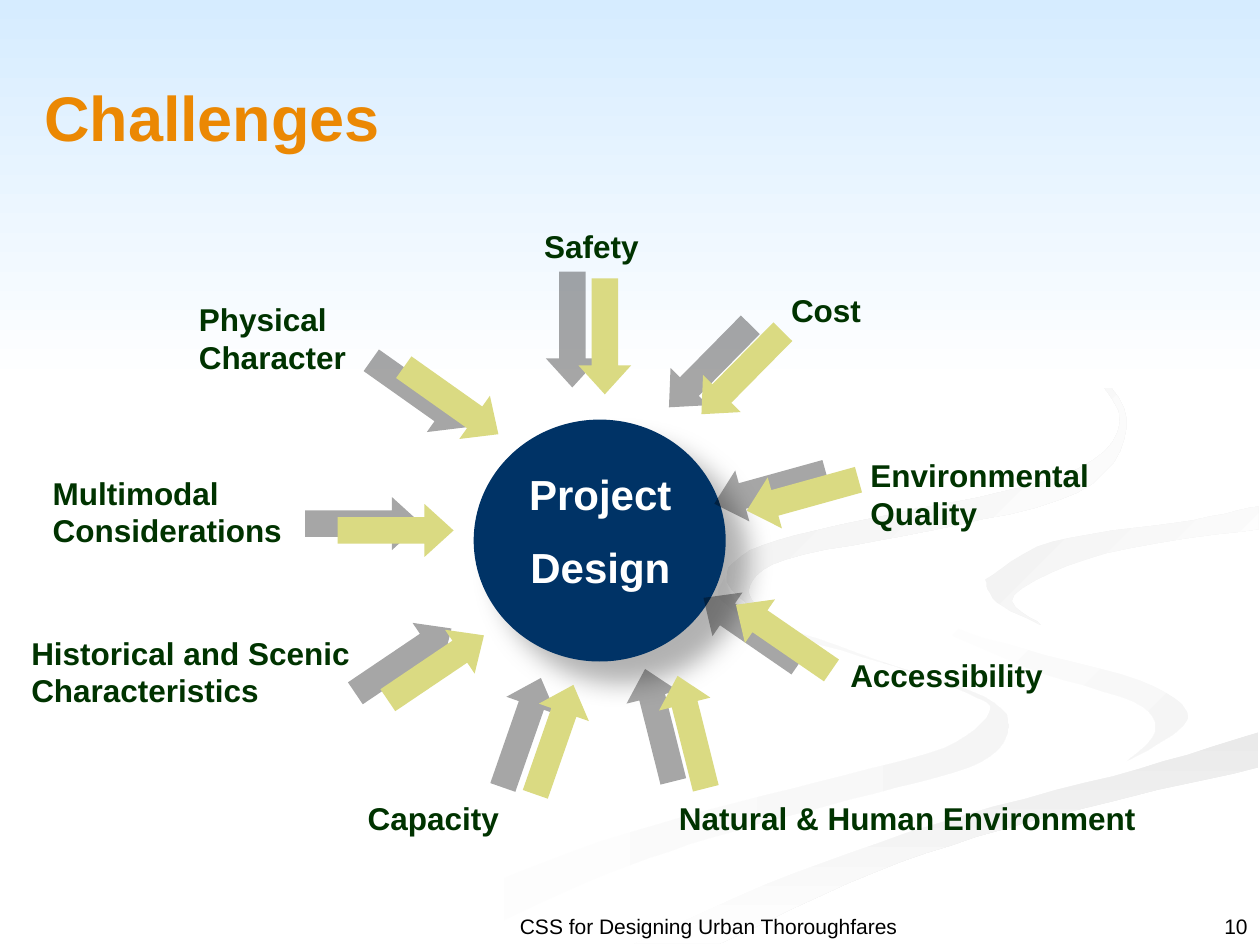
from typing import NamedTuple

from lxml.etree import SubElement
from pptx import Presentation
from pptx.dml.color import RGBColor
from pptx.enum.shapes import MSO_SHAPE
from pptx.enum.text import MSO_ANCHOR, PP_ALIGN
from pptx.oxml.ns import qn
from pptx.util import Emu, Pt

PX = 9144  # EMU per px, 100 px to the inch
FONT = "Arial"
COLORS = {
    "title": "EB8803", "label": "003300", "footer": "000000", "hub": "003366",
    "hub_text": "FFFFFF", "arrow": "DADA82", "shadow": "000000",
    "white": "FFFFFF", "sky": "D6ECFF", "mist": "F5F5F5", "road": "EAEAEA",
    "far_road": "EDEDED", "bend": "F1F1F1",
}
Edge = list[tuple[int, int]]


class Road(NamedTuple):
    start: str
    end: str
    angle: int  # clockwise degrees
    left: list[Edge]
    right: list[Edge]


class Arrow(NamedTuple):
    left: int
    top: int
    rotation: float


class Label(NamedTuple):
    text: str
    left: int
    top: int
    width: int
    height: int
    wrap: bool = True


class Shadow(NamedTuple):
    opacity: int  # percent
    blur: float  # points
    distance: float  # points
    direction: int  # degrees


# Road edges, each a few points joined by a smooth curve
UPPER_BEND = [(999, 402), (933, 415), (835, 430), (782, 460)]
LOWER_BEND = [(782, 460), (817, 492), (904, 519), (999, 538)]
SLOPE = [(999, 581), (904, 610), (765, 647), (630, 693), (503, 749)]
ROADS = [
    Road("white", "mist", 0,
         [[(575, 459), (572, 476), (611, 499), (697, 525), (770, 551), (785, 566),
           (749, 594), (652, 620), (499, 661), (376, 707), (300, 749)]],
         [[(575, 459), (594, 485), (682, 519), (781, 553), (800, 581), (769, 609),
           (676, 634), (564, 665), (466, 700), (361, 749)]]),
    Road("white", "mist", 45,
         [[(724, 464), (758, 498), (830, 519), (905, 540), (943, 570), (894, 605)]],
         [[(724, 464), (739, 494), (815, 530), (900, 557), (917, 581), (894, 605)]]),
    Road("road", "white", 90, [SLOPE],
         [[(999, 609), (821, 651), (695, 692), (571, 749)]]),
    Road("white", "white", 0,
         [[(999, 387), (920, 401), (788, 422), (732, 446), (728, 474), (793, 509),
           (905, 540), (943, 570), (892, 605), (704, 655), (573, 703), (477, 749)]],
         [UPPER_BEND, LOWER_BEND, SLOPE]),
    Road("bend", "white", 45, [UPPER_BEND, [(782, 460), (791, 478), (826, 496)]],
         [[(999, 420), (878, 439), (805, 472), (826, 496)]]),
    Road("far_road", "white", 45,
         [[(762, 233), (846, 279), (889, 335), (842, 378), (704, 409), (605, 433),
           (577, 462), (622, 500)]],
         [[(762, 233), (864, 291), (894, 340), (855, 391), (739, 421), (624, 444),
           (594, 470), (622, 500)]]),
]

ARROW_SIZE = (92, 42)
ARROWS = [
    Arrow(268, 400, 0), Arrow(434, 246, 90), Arrow(591, 372, 164.5),
    Arrow(394, 566, 289.2), Arrow(503, 560, 255.9), Arrow(543, 275, 134.6),
    Arrow(576, 485, 214.5), Arrow(300, 509, 326), Arrow(312, 297, 35.3),
]

LABELS = [
    Label("Safety", 422, 175, 116, 40),
    Label("Physical Character", 148, 233, 167, 70),
    Label("Cost", 618, 226, 76, 40, False),
    Label("Environmental Quality", 681, 357, 246, 70),
    Label("Natural & Human Environment", 529, 629, 454, 40),
    Label("Capacity", 282, 629, 125, 40, False),
    Label("Accessibility", 665, 516, 174, 40, False),
    Label("Multimodal\nConsiderations", 32, 371, 234, 70),
    Label("Historical and Scenic Characteristics", 15, 498, 317, 70),
]


def rgb(name: str) -> RGBColor:
    return RGBColor.from_string(COLORS[name])


def box(*lengths: int) -> list[Emu]:
    return [Emu(length * PX) for length in lengths]


def paint(shape, start: str, end: str, angle: int = 0) -> None:
    """Fill a shape plainly or with a two-stop gradient, without a line."""
    if start == end:
        shape.fill.solid()
        shape.fill.fore_color.rgb = rgb(start)
    else:
        shape.fill.gradient()
        shape.fill.gradient_angle = -angle % 360
        for stop, name in zip(shape.fill.gradient_stops, (start, end)):
            stop.color.rgb = rgb(name)
    shape.line.fill.background()
    shape.shadow.inherit = False


def cast_shadow(shape, shadow: Shadow) -> None:
    effects = shape._element.spPr.find(qn("a:effectLst"))
    outer = SubElement(effects, qn("a:outerShdw"), blurRad=str(Pt(shadow.blur)),
                       dist=str(Pt(shadow.distance)),
                       dir=str(shadow.direction * 60000), algn="ctr", rotWithShape="0")
    color = SubElement(outer, qn("a:srgbClr"), val=COLORS["shadow"])
    SubElement(color, qn("a:alpha"), val=str(shadow.opacity * 1000))


def write(shape, text: str, size: int, color: str, bold: bool = True,
          align=PP_ALIGN.LEFT, anchor=MSO_ANCHOR.TOP, gap: int = 0, wrap: bool = True) -> None:
    frame = shape.text_frame
    frame.text = text
    frame.word_wrap = wrap
    frame.vertical_anchor = anchor
    for index, paragraph in enumerate(frame.paragraphs):
        paragraph.alignment = align
        paragraph.space_before = Pt(gap if index else 0)
        font = paragraph.font
        font.name, font.size, font.bold = FONT, Pt(size), bold
        font.color.rgb = rgb(color)


def smooth(edge: Edge, steps: int = 6) -> list[tuple[float, float]]:
    """Points of a Catmull-Rom curve through the points of an edge."""
    padded = [edge[0], *edge, edge[-1]]
    curve = []
    for before, first, last, after in zip(padded, padded[1:], padded[2:], padded[3:]):
        for step in range(steps):
            t = step / steps
            curve.append(tuple(
                b + ((c - a) * t + (2 * a - 5 * b + 4 * c - d) * t**2
                     + (3 * b - a - 3 * c + d) * t**3) / 2
                for a, b, c, d in zip(before, first, last, after)))
    return [*curve, edge[-1]]


def draw_road(shapes, road: Road) -> None:
    left, right = ([point for edge in side for point in smooth(edge)]
                   for side in (road.left, road.right))
    outline = left + right[::-1]
    builder = shapes.build_freeform(*outline[0], scale=PX)
    builder.add_line_segments(outline[1:], close=True)
    paint(builder.convert_to_shape(), road.start, road.end, road.angle)


def draw_arrow(shapes, arrow: Arrow) -> None:
    shape = shapes.add_shape(MSO_SHAPE.RIGHT_ARROW, *box(arrow.left, arrow.top, *ARROW_SIZE))
    shape.adjustments[0], shape.adjustments[1] = 0.5, 0.55
    shape.rotation = arrow.rotation
    paint(shape, "arrow", "arrow")
    cast_shadow(shape, Shadow(35, 0, 19, 192))


def main() -> None:
    presentation = Presentation()
    presentation.slide_width, presentation.slide_height = box(1000, 750)
    slide = presentation.slides.add_slide(presentation.slide_layouts[5])
    shapes = slide.shapes

    # Winding roads and sky
    for road in ROADS:
        draw_road(shapes, road)
    sky = shapes.add_shape(MSO_SHAPE.RECTANGLE, *box(0, 0, 1000, 308))
    paint(sky, "sky", "white", 90)

    # Title, brought in front of the sky
    title = shapes.title
    title.left, title.top, title.width, title.height = box(25, 30, 975, 125)
    write(title, "Challenges", 36, "title", anchor=MSO_ANCHOR.MIDDLE)
    shapes._spTree.append(title._element)

    # Footer and page number
    write(shapes.add_textbox(*box(175, 720, 775, 30)), "CSS for Designing Urban Thoroughfares",
          12, "footer", bold=False, align=PP_ALIGN.CENTER)
    write(shapes.add_textbox(*box(958, 698, 42, 52)), "10", 12, "footer", bold=False,
          align=PP_ALIGN.RIGHT, anchor=MSO_ANCHOR.BOTTOM)

    # Hub
    hub = shapes.add_shape(MSO_SHAPE.OVAL, *box(376, 333, 200, 192))
    paint(hub, "hub", "hub")
    cast_shadow(hub, Shadow(30, 15, 18, 45))
    write(shapes.add_textbox(*box(393, 367, 167, 111)), "Project\nDesign", 24, "hub_text",
          align=PP_ALIGN.CENTER, gap=13)

    # Challenges pointing at the hub
    for arrow in ARROWS:
        draw_arrow(shapes, arrow)
    for label in LABELS:
        textbox = shapes.add_textbox(*box(label.left, label.top, label.width, label.height))
        write(textbox, label.text, 18, "label", wrap=label.wrap)

    presentation.save("out.pptx")


if __name__ == "__main__":
    main()
